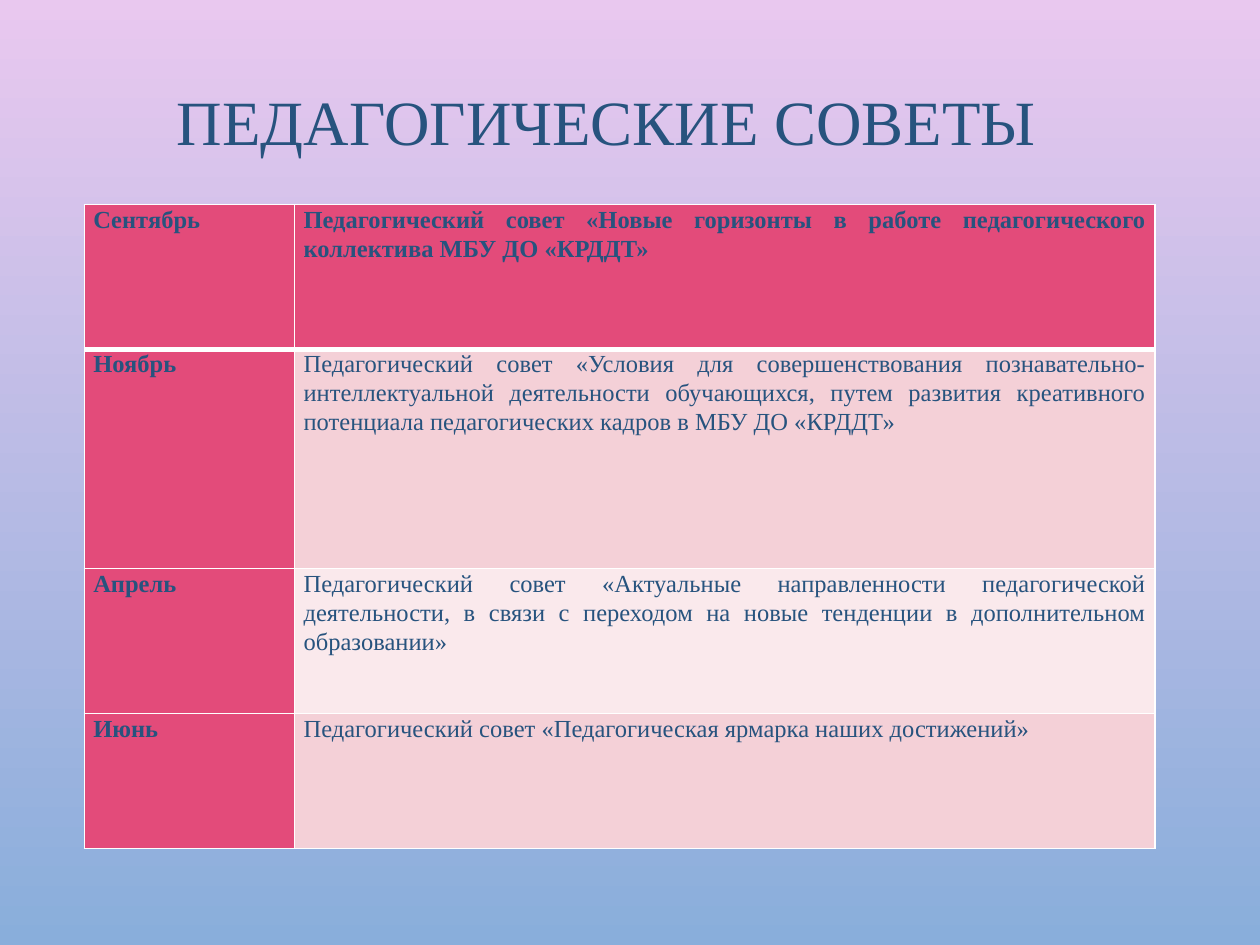
from lxml import etree
from pptx import Presentation
from pptx.dml.color import RGBColor
from pptx.enum.text import MSO_ANCHOR as Anchor, PP_ALIGN as Align
from pptx.oxml.ns import qn
from pptx.util import Cm, Pt

FONT = "Times New Roman"
TEXT = "27537E"
ACCENT = "E34B7A"
BORDER = "FFFFFF"
BANDS = ["F4D0D7", "FAE9EC"]

COLUMN_WIDTHS = [4.24, 17.34]
ROW_HEIGHTS = [2.92, 4.42, 2.92, 2.72]
COUNCILS = [
    ("Сентябрь", "Педагогический совет «Новые горизонты в работе педагогического "
     "коллектива МБУ ДО «КРДДТ»"),
    ("Ноябрь", "Педагогический совет «Условия для совершенствования "
     "познавательно-интеллектуальной деятельности обучающихся, путем развития "
     "креативного потенциала педагогических кадров в МБУ ДО «КРДДТ»"),
    ("Апрель", "Педагогический совет «Актуальные направленности педагогической "
     "деятельности, в связи с переходом на новые тенденции в дополнительном "
     "образовании»"),
    ("Июнь", "Педагогический совет «Педагогическая ярмарка наших достижений»"),
]


def color(value):
    return RGBColor.from_string(value)


def write(text_frame, text, size, align, spacing, bold=False):
    paragraph = text_frame.paragraphs[0]
    paragraph.alignment = align
    paragraph.line_spacing = spacing
    run = paragraph.add_run()
    run.text = text
    run.font.name = FONT
    run.font.size = Pt(size)
    run.font.bold = bold
    run.font.color.rgb = color(TEXT)


def set_borders(cell, **widths):
    properties = cell._tc.get_or_add_tcPr()
    for side in ("L", "R", "T", "B"):
        line = etree.SubElement(properties, qn(f"a:ln{side}"),
                                w=str(Pt(widths.get(side, 1))))
        fill = etree.SubElement(line, qn("a:solidFill"))
        etree.SubElement(fill, qn("a:srgbClr"), val=BORDER)


def paint_background(slide):
    fill = slide.background.fill
    fill.gradient()
    fill.gradient_angle = 270
    for stop, value in zip(fill.gradient_stops, ["E9C8EF", "89AEDB"]):
        stop.color.rgb = color(value)


def add_title(slide, left, top, width, height):
    box = slide.shapes.add_textbox(Cm(left), Cm(top), Cm(width), Cm(height))
    text_frame = box.text_frame
    text_frame.word_wrap = True
    text_frame.vertical_anchor = Anchor.MIDDLE
    write(text_frame, "ПЕДАГОГИЧЕСКИЕ СОВЕТЫ", 36, Align.CENTER, 0.9)


def add_schedule(slide, left, top):
    table = slide.shapes.add_table(
        len(COUNCILS), len(COLUMN_WIDTHS), Cm(left), Cm(top),
        Cm(sum(COLUMN_WIDTHS)), Cm(sum(ROW_HEIGHTS))).table
    for column, width in zip(table.columns, COLUMN_WIDTHS):
        column.width = Cm(width)
    for row, height in zip(table.rows, ROW_HEIGHTS):
        row.height = Cm(height)

    for row_index, council in enumerate(COUNCILS):
        for column_index, text in enumerate(council):
            cell = table.cell(row_index, column_index)
            cell.margin_left = cell.margin_right = Cm(0.18)
            cell.margin_top = cell.margin_bottom = 0
            # A thick rule separates the first row from the rest
            set_borders(cell, B=3 if row_index == 0 else 1,
                        T=3 if row_index == 1 else 1)
            # First row and first column are accented, the rest is banded
            accented = row_index == 0 or column_index == 0
            cell.fill.solid()
            cell.fill.fore_color.rgb = color(
                ACCENT if accented else BANDS[(row_index - 1) % 2])
            write(cell.text_frame, text, 14, Align.JUSTIFY, 1.07, accented)


def main():
    presentation = Presentation()
    presentation.slide_width = Cm(25.4)
    presentation.slide_height = Cm(19.05)
    slide = presentation.slides.add_slide(presentation.slide_layouts[6])
    paint_background(slide)
    add_title(slide, 0.71, 0.33, 23.04, 4.39)
    add_schedule(slide, 1.7, 4.12)
    presentation.save("out.pptx")


if __name__ == "__main__":
    main()
